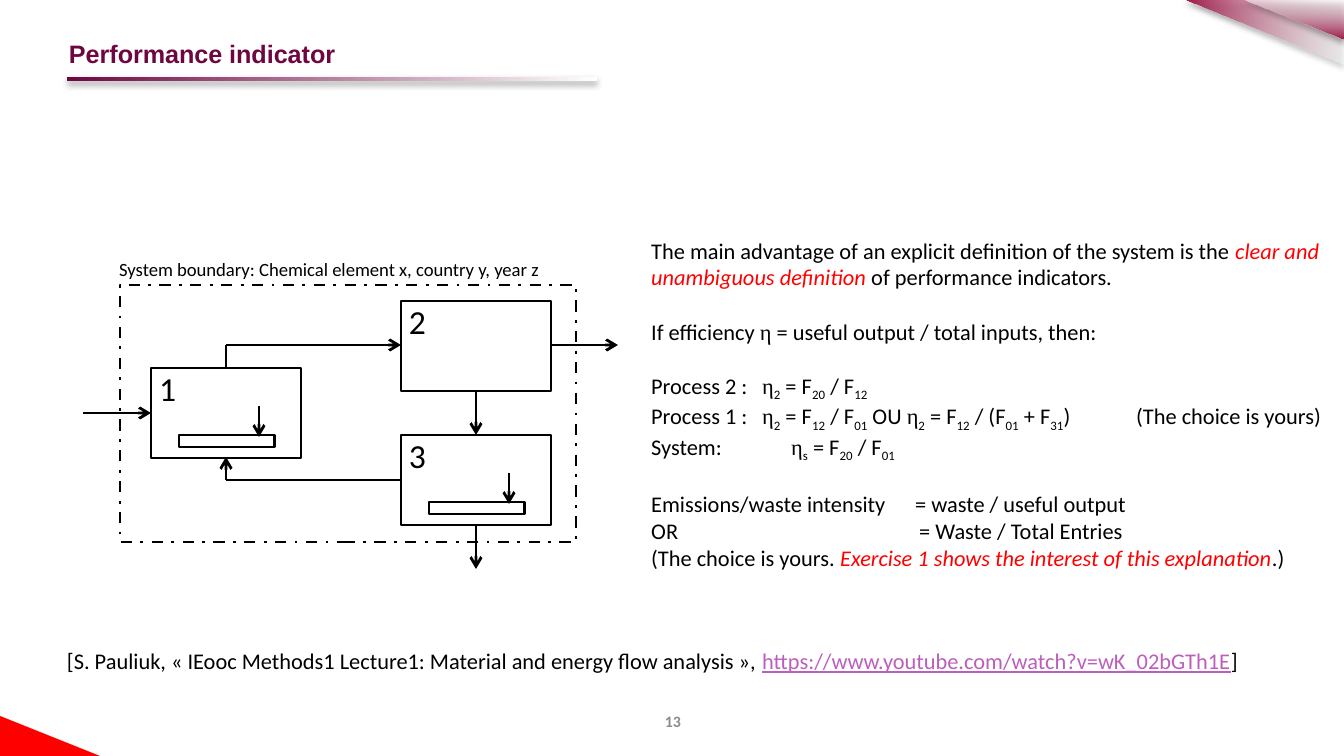
from itertools import groupby

from lxml import etree
from pptx import Presentation
from pptx import util as u
from pptx.dml.color import RGBColor
from pptx.enum import dml, shapes, text
from pptx.oxml.ns import qn

PX = 914400 / 134.4
BLACK, WHITE = RGBColor(0, 0, 0), RGBColor(255, 255, 255)
RED, GRAY = RGBColor(255, 0, 0), RGBColor(0x8C, 0x8C, 0x8C)
PLUM, WINE = RGBColor(0x6E, 0x07, 0x40), RGBColor(0x9D, 0x17, 0x47)
LINK = RGBColor(0xBC, 0x5F, 0xBC)
LEFT, MID, RIGHT = text.PP_ALIGN.LEFT, text.PP_ALIGN.CENTER, text.PP_ALIGN.RIGHT

# Marks: |subscript|, *red italic*, ~link~
MARKS = "|*~"
TITLE = "Performance indicator"
CAPTION = "System boundary: Chemical element x, country y, year z"
SOURCE = ("[S. Pauliuk, «\u00a0IEooc Methods1 Lecture1: Material and energy flow analysis\u00a0», "
          "~https://www.youtube.com/watch?v=wK_02bGTh1E~]")
GAP = 14.6
BODY = [  # space before in points, tab stops in px, text
    (0, [], "The main advantage of an explicit definition of the system is the "
            "*clear and unambiguous definition *of performance indicators."),
    (GAP, [], "If efficiency η = useful output / total inputs, then:"),
    (GAP, [111], "Process 2 :\tη|2| = F|20| / F|12|"),
    (0, [111, 485], "Process 1 :\tη|2| = F|12| / F|01| OU η|2| = F|12| / (F|01| + F|31|)"
                    "\t(The choice is yours)"),
    (0, [140], "System:\tη|s| = F|20| / F|01|"),
    (GAP, [264], "Emissions/waste intensity\t= waste / useful output"),
    (0, [268], "OR\t= Waste / Total Entries"),
    (0, [], "(The choice is yours. *Exercise 1 shows the interest of this explanation*.)"),
]

BOUNDARY = (120, 285, 456, 257)
BOX = (150, 90)
STEPS = [("2", 401, 301, False), ("3", 401, 435, True), ("1", 151, 368, True)]  # has stock
FLOWS = [  # x1, y1, x2, y2, arrowhead
    (83, 413, 151, 413, True),
    (226, 368, 226, 345, False),
    (226, 345, 401, 345, True),
    (551, 345, 618, 345, True),
    (401, 480, 226, 480, False),
    (226, 480, 226, 457, True),
    (476, 391, 476, 435, True),
    (476, 525, 476, 569, True),
]
CORNERS = [  # points, stops as (colour, opacity %), gradient angle
    ([(1184, 0), (1344, 0), (1344, 65)], [(WINE, 100), (WHITE, 47)], 352),
    ([(1243, 0), (1344, 0), (1344, 40)], [(WINE, 100), (WHITE, 57)], 90),
    ([(0, 716), (100, 756), (0, 756)], [(RED, 100)], 0),
]


def px(*sizes):
    return [u.Emu(round(size * PX)) for size in sizes]


def paint(shape, stops, angle=0):
    """Fill with one colour or a gradient, without outline, over a soft shadow."""
    fill = shape.fill
    if len(stops) == 1:
        fill.solid()
        fill.fore_color.rgb = stops[0][0]
    else:
        fill.gradient()
        fill.gradient_angle = angle
        for stop, (color, _) in zip(fill.gradient_stops, stops):
            stop.color.rgb = color
        props = shape._element.spPr
        for node, (_, alpha) in zip(props.iter(qn("a:srgbClr")), stops):
            etree.SubElement(node, qn("a:alpha"), val=str(alpha * 1000))
    shape.line.fill.background()
    shape.shadow.inherit = False
    effects = shape._element.spPr.find(qn("a:effectLst"))
    shadow = etree.SubElement(effects, qn("a:outerShdw"), blurRad="40000",
                              dist="23000", dir="5400000", rotWithShape="0")
    color = etree.SubElement(shadow, qn("a:srgbClr"), val="000000")
    etree.SubElement(color, qn("a:alpha"), val="35000")


def parts(line):
    """Yield each character with its mark."""
    mode = ""
    for char in line:
        if char in MARKS:
            mode = "" if mode == char else char
        else:
            yield char, "η" if char == "η" else mode


def write(para, line, size, align=LEFT, color=BLACK, bold=False):
    para.alignment = align
    for mode, chars in groupby(parts(line), key=lambda part: part[1]):
        run = para.add_run()
        run.text = "".join(char for char, _ in chars)
        font = run.font
        font.size, font.bold = u.Pt(size), bold
        font.name = "Times New Roman" if mode == "η" else "Calibri"
        font.color.rgb = {"*": RED, "~": LINK}.get(mode, color)
        if mode == "*":
            font.italic = True
        elif mode == "~":
            font.underline = True
        elif mode == "|":
            run._r.get_or_add_rPr().set("baseline", "-25000")


def label(tree, place):
    frame = tree.add_textbox(*px(*place)).text_frame
    frame.word_wrap = True
    return frame


def outline(tree, *place):
    shape = tree.add_shape(shapes.MSO_SHAPE.RECTANGLE, *px(*place))
    shape.shadow.inherit = False
    shape.fill.background()
    shape.line.color.rgb = BLACK
    shape.line.width = u.Pt(1.5)
    return shape


def flow(tree, x1, y1, x2, y2, head=True):
    line = tree.add_connector(shapes.MSO_CONNECTOR.STRAIGHT, *px(x1, y1, x2, y2))
    line.line.color.rgb = BLACK
    line.line.width = u.Pt(1.5)
    if head:
        etree.SubElement(line.line._get_or_add_ln(), qn("a:tailEnd"), type="arrow")
    etree.SubElement(line._element.spPr, qn("a:effectLst"))


def frame_slide(slide):
    """Add the title, rule, corners and page number."""
    tree = slide.shapes
    rule = tree.add_shape(shapes.MSO_SHAPE.RECTANGLE, *px(67, 77, 530, 4))
    paint(rule, [(PLUM, 100), (WHITE, 100)])
    for points, stops, angle in CORNERS:
        pen = tree.build_freeform(*points[0], scale=PX)
        pen.add_line_segments(points[1:], close=True)
        paint(pen.convert_to_shape(), stops, angle)
    title = tree.title
    title.left, title.top, title.width, title.height = px(56, 38, 1210, 31)
    frame = title.text_frame
    frame.text = TITLE
    frame.vertical_anchor = text.MSO_ANCHOR.MIDDLE
    frame.margin_left = px(13)[0]
    frame.margin_top = frame.margin_right = frame.margin_bottom = 0
    para = frame.paragraphs[0]
    para.alignment = LEFT
    font = para.runs[0].font
    font.name, font.size, font.bold = "Arial", u.Pt(13.5), True
    font.color.rgb = PLUM
    page = label(tree, (460, 701, 426, 40))
    page.vertical_anchor = text.MSO_ANCHOR.MIDDLE
    write(page.paragraphs[0], "13", 8.5, MID, GRAY, True)


def draw_system(tree):
    outline(tree, *BOUNDARY).line.dash_style = dml.MSO_LINE.DASH_DOT
    write(label(tree, (106, 251, 470, 36)).paragraphs[0], CAPTION, 10)
    for name, x, y, stock in STEPS:
        frame = outline(tree, x, y, *BOX).text_frame
        frame.margin_left = px(8)[0]
        frame.margin_top = frame.margin_right = frame.margin_bottom = 0
        frame.vertical_anchor = text.MSO_ANCHOR.TOP
        write(frame.paragraphs[0], name, 18)
        if stock:
            outline(tree, x + 28, y + 67, 96, 12)
            flow(tree, x + 108, y + 38, x + 108, y + 69)
    for item in FLOWS:
        flow(tree, *item)


def add_body(tree):
    frame = label(tree, (638, 230, 702, 339))
    for index, (gap, tabs, line) in enumerate(BODY):
        para = frame.add_paragraph() if index else frame.paragraphs[0]
        if gap:
            para.space_before = u.Pt(gap)
        if tabs:
            stops = etree.SubElement(para._p.get_or_add_pPr(), qn("a:tabLst"))
            for stop in px(*tabs):
                etree.SubElement(stops, qn("a:tab"), pos=str(int(stop)), algn="l")
        write(para, line, 12)


def main():
    deck = Presentation()
    deck.slide_width, deck.slide_height = px(1344, 756)
    slide = deck.slides.add_slide(deck.slide_layouts[5])
    frame_slide(slide)
    write(label(slide.shapes, (40, 641, 1211, 40)).paragraphs[0], SOURCE, 12, RIGHT)
    draw_system(slide.shapes)
    add_body(slide.shapes)
    deck.save("out.pptx")


if __name__ == "__main__":
    main()
